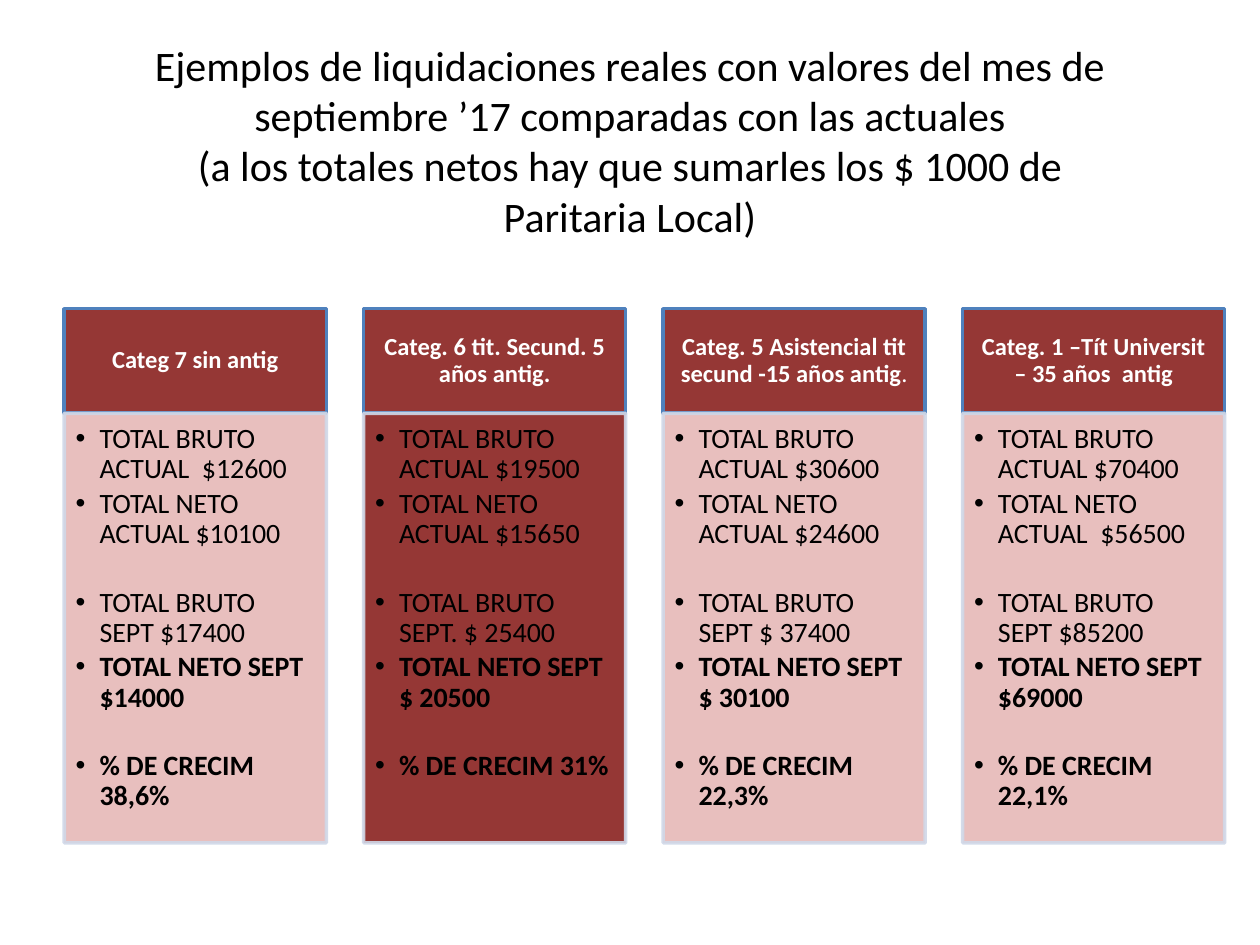
"""Build a slide that compares four pay settlements in columns."""
from lxml.etree import SubElement
from pptx import Presentation
from pptx.dml.color import RGBColor
from pptx.enum.shapes import MSO_SHAPE
from pptx.enum.text import MSO_ANCHOR, PP_ALIGN
from pptx.oxml.ns import qn
from pptx.util import Inches, Pt

TITLE = [
    "Ejemplos de liquidaciones reales con valores del mes de septiembre ’17 comparadas con las actuales",
    "(a los totales netos hay que sumarles los $ 1000 de",
    "Paritaria Local)",
]
LABELS = ["TOTAL BRUTO ACTUAL", "TOTAL NETO ACTUAL", "TOTAL BRUTO SEPT",
          "TOTAL NETO SEPT", "% DE CRECIM"]
BOLD_ROWS = {3, 4}
GAP_ROWS = {2, 4}

BLACK = RGBColor(0x00, 0x00, 0x00)
WHITE = RGBColor(0xFF, 0xFF, 0xFF)
DARK_RED = RGBColor(0x95, 0x37, 0x35)
PINK = RGBColor(0xE6, 0xB9, 0xB8)
BLUE = RGBColor(0x4F, 0x81, 0xBD)
PALE_BLUE = RGBColor(0xD0, 0xD8, 0xE8)

COLUMNS = [
    ([("Categ 7 sin antig", True)], PINK,
     ["  $12600", " $10100", " $17400", " $14000", " 38,6%"]),
    ([("Categ. 6 tit. Secund. 5 años antig.", True)], DARK_RED,
     [" $19500", " $15650", ". $ 25400", " $ 20500", " 31%"]),
    ([("Categ. 5 Asistencial tit secund -15 años antig", True), (".", False)], PINK,
     [" $30600", " $24600", " $ 37400", " $ 30100", " 22,3%"]),
    ([("Categ. 1 –Tít Universit – 35 años  antig", True)], PINK,
     [" $70400", "  $56500", " $85200", " $69000", " 22,1%"]),
]

FONT = "Calibri"
LEFT, RIGHT, TOP = 0.51, 9.72, 2.45
COL_W, HEAD_H, BODY_H = 2.08, 0.83, 3.41
PITCH = (RIGHT - LEFT - COL_W) / (len(COLUMNS) - 1)


def set_margins(tf, left, top, right, bottom):
    tf.margin_left, tf.margin_top = Inches(left), Inches(top)
    tf.margin_right, tf.margin_bottom = Inches(right), Inches(bottom)
    tf.word_wrap = True


def add_run(p, text, size, color, bold=False):
    r = p.add_run()
    r.text = text
    r.font.name, r.font.size, r.font.bold = FONT, Pt(size), bold
    r.font.color.rgb = color


def set_alpha(fill, percent):
    color = fill._xPr.find(qn("a:solidFill"))[0]
    SubElement(color, qn("a:alpha")).set("val", str(percent * 1000))


def add_box(s, x, y, h, fill, line):
    sp = s.shapes.add_shape(MSO_SHAPE.RECTANGLE, Inches(x), Inches(y), Inches(COL_W), Inches(h))
    sp.shadow.inherit = False
    sp.fill.solid()
    sp.fill.fore_color.rgb = fill
    sp.line.color.rgb = line
    sp.line.width = Pt(2)
    return sp


def add_title(s):
    tf = s.shapes.add_textbox(Inches(0.5), Inches(0.3), Inches(9), Inches(1.62)).text_frame
    set_margins(tf, 0.1, 0, 0.1, 0)
    tf.vertical_anchor = MSO_ANCHOR.MIDDLE
    p = tf.paragraphs[0]
    p.alignment = PP_ALIGN.CENTER
    for i, line in enumerate(TITLE):
        if i:
            p.add_line_break()
        add_run(p, line, 24, BLACK)


def add_header(s, x, runs):
    tf = add_box(s, x, TOP, HEAD_H, DARK_RED, BLUE).text_frame
    set_margins(tf, 0.11, 0.06, 0.11, 0.06)
    tf.vertical_anchor = MSO_ANCHOR.MIDDLE
    p = tf.paragraphs[0]
    p.alignment, p.line_spacing = PP_ALIGN.CENTER, 0.9
    for text, bold in runs:
        add_run(p, text, 14, WHITE, bold)


def add_body(s, x, fill, values):
    sp = add_box(s, x, TOP + HEAD_H, BODY_H, fill, PALE_BLUE)
    set_alpha(sp.line.fill, 90)
    if fill == PINK:
        set_alpha(sp.fill, 90)
    tf = sp.text_frame
    set_margins(tf, 0.09, 0.09, 0.12, 0.14)
    tf.vertical_anchor = MSO_ANCHOR.TOP
    for i, (label, value) in enumerate(zip(LABELS, values)):
        p = tf.add_paragraph() if i else tf.paragraphs[0]
        p.alignment, p.line_spacing = PP_ALIGN.LEFT, 0.9
        p.space_before = Pt(19.5 if i in GAP_ROWS else 0)
        p.space_after = Pt(2.4)
        pPr = p._p.get_or_add_pPr()
        pPr.set("marL", str(Inches(0.19)))
        pPr.set("indent", str(Inches(-0.19)))
        SubElement(pPr, qn("a:buFont")).set("typeface", "Arial")
        SubElement(pPr, qn("a:buChar")).set("char", "•")
        add_run(p, label + value, 16, BLACK, i in BOLD_ROWS)


def main():
    prs = Presentation()
    prs.slide_width, prs.slide_height = Inches(10), Inches(7.5)
    s = prs.slides.add_slide(prs.slide_layouts[6])
    add_title(s)
    for i, (header, fill, values) in enumerate(COLUMNS):
        x = LEFT + i * PITCH
        add_header(s, x, header)
        add_body(s, x, fill, values)
    prs.save("out.pptx")


if __name__ == "__main__":
    main()
